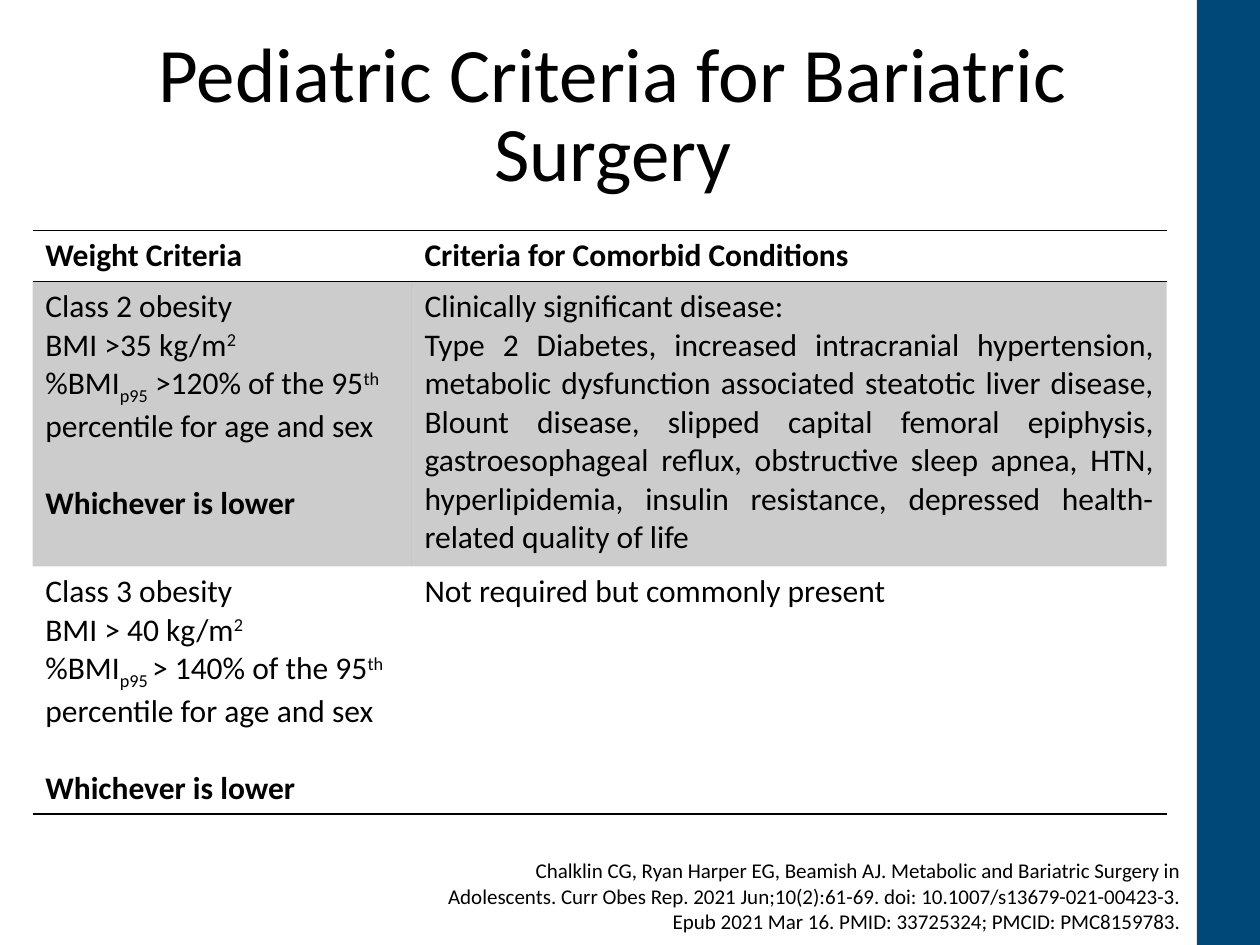
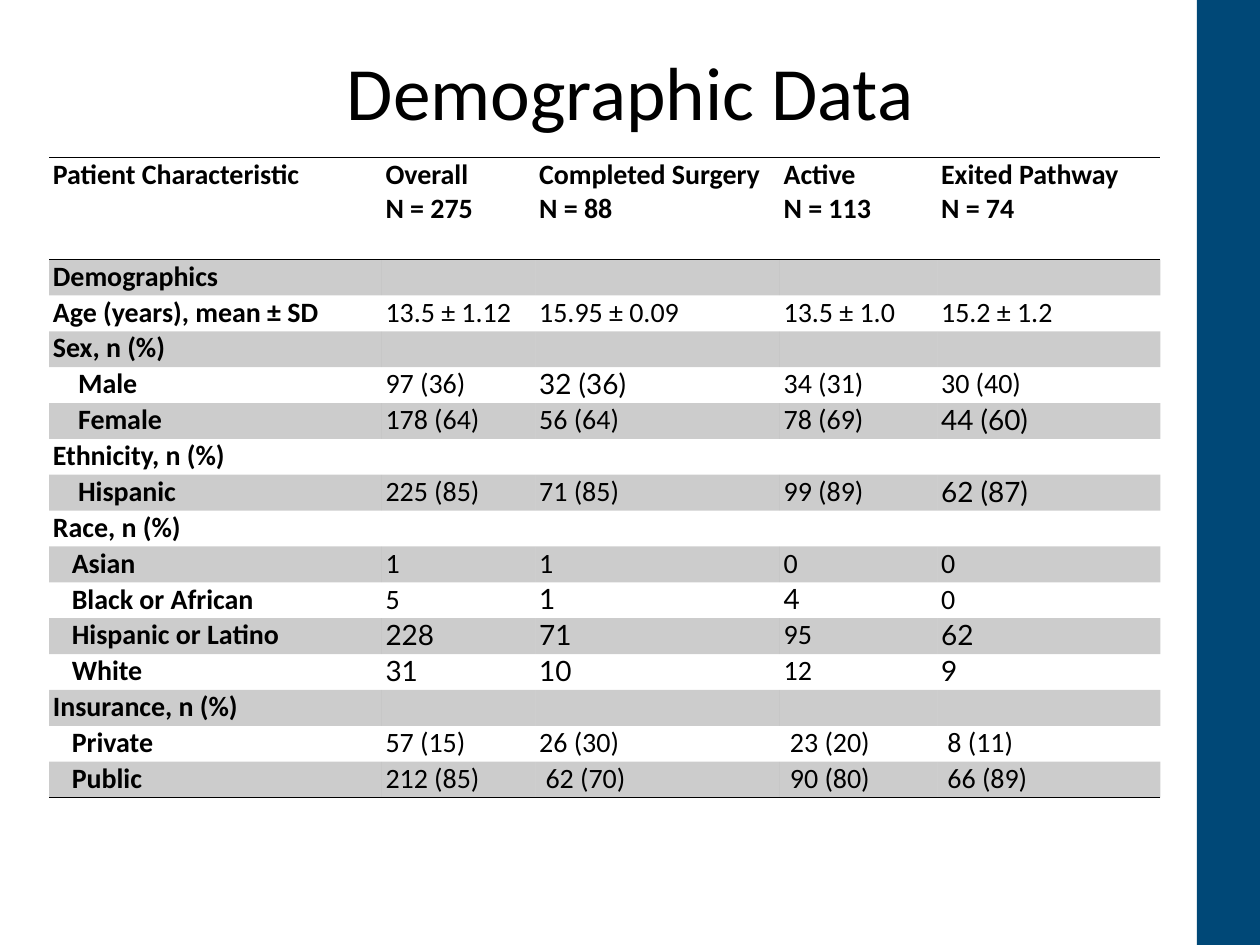
from pptx import Presentation, util as u
from pptx.dml.color import RGBColor
from pptx.enum import shapes as sh, text as tx
from pptx.oxml.ns import qn
from lxml import etree

THEME = dict(
    font="Calibri", alt="Lato", ink="000000", band="004877", tint=20000,
    lead=45, crit=18, demo=16, cite=12, gap=22, step=0.05, rule=1,
    plain="{2D5ABB26-0587-4C30-8999-92F81FD0307C}",
)
WIDE, HIGH = 10, 7.5


# Content: a run is (text, marks); b bold, ^ raised, _ lowered, L second font
def para(*runs, gap=0, level=0, align=None):
    return dict(runs=runs, gap=gap, level=level, align=align)


def bold(words, level=0):
    return [para((line, "b"), level=level) for line in words.split("\n")]


def weight(grade, bmi, sub, share):
    return [
        para((f"Class {grade} obesity", "")),
        para((f"BMI {bmi} kg/m", ""), ("2", "^")),
        para(("%BMI", ""), (sub, "_"), (f"{share} of the 95", ""),
             ("th", "^"), (" percentile for age and sex", "")),
        para(("Whichever is lower", "b"), gap=THEME["gap"]),
    ]


SIGNS = (
    "Type 2 Diabetes, increased intracranial hypertension, metabolic "
    "dysfunction associated steatotic liver disease, Blount disease, slipped "
    "capital femoral epiphysis, gastroesophageal reflux, obstructive sleep "
    "apnea, HTN, hyperlipidemia, insulin resistance, depressed "
    "health-related quality of life"
)
FULL = tx.PP_ALIGN.JUSTIFY
CRITERIA = [
    [bold("Weight Criteria"), bold("Criteria for Comorbid Conditions")],
    [weight(2, ">35", "p95", " >120%"),
     [para(("Clinically significant disease:", ""), align=FULL),
      para((SIGNS, ""), align=FULL)]],
    [weight(3, "> 40", "p95 ", "> 140%"),
     [para(("Not required but commonly present", ""))]],
]
SOURCE = (
    "Chalklin CG, Ryan Harper EG, Beamish AJ. Metabolic and Bariatric Surgery "
    "in Adolescents. Curr Obes Rep. 2021 Jun;10(2):61-69. doi: "
    "10.1007/s13679-021-00423-3. Epub 2021 Mar 16. PMID: 33725324; "
    "PMCID: PMC8159783."
)
HEADS = ["Patient Characteristic", "Overall\nN = 275",
         "Completed Surgery\nN = 88", "Active\nN = 113", "Exited Pathway\nN = 74"]
# Label, then figures: each ">" indents one step, "*" takes the second font
GROUPS = [
    ["Demographics"],
    ["Age (years), mean ± SD", "13.5 ± 1.12", "15.95 ± 0.09", "13.5 ± 1.0",
     "15.2 ± 1.2"],
    ["Sex, n (%)"],
    [">>>>Male", "97 (36)", "*32 (36)", "34 (31)", "30 (40)"],
    [">>>>Female", "178 (64)", "56 (64)", "78 (69)", "*44 (60)"],
    ["Ethnicity, n (%)"],
    [">>>>Hispanic", "225 (85)", "71 (85)", "99 (89)", "*62 (87)"],
    ["Race, n (%)"],
    [">>>Asian", "1", "1", "0", "0"],
    [">>>Black or African", "5", "*1", "*4", "0"],
    [">>>Hispanic or Latino", "*228", "*71", "95", "*62"],
    [">>>White", "*31", "*10", "12", "*9"],
    ["Insurance, n (%)"],
    [">>>Private", "57 (15)", "26 (30)", ">23 (20)", ">8 (11)"],
    [">>>Public", "212 (85)", ">62 (70)", ">90 (80)", ">66 (89)"],
]


def figure(mark):
    words = mark.lstrip(">")
    style = "L" if words.startswith("*") else ""
    return [para((words.lstrip("*"), style), level=len(mark) - len(words))]


def group(row):
    name = row[0].lstrip(">")
    cells = [bold(name, len(row[0]) - len(name))]
    cells += [figure(mark) for mark in row[1:]]
    return cells + [[]] * (len(HEADS) - len(row))


# Text
def write(frame, paras, size):
    for n, item in enumerate(paras):
        p = frame.paragraphs[0] if n == 0 else frame.add_paragraph()
        if item["align"] is not None:
            p.alignment = item["align"]
        if item["gap"]:
            p.space_before = u.Pt(item["gap"])
        if item["level"]:
            left = u.Inches(item["level"] * THEME["step"])
            p._p.get_or_add_pPr().set("marL", str(left))
        for words, marks in item["runs"]:
            run = p.add_run()
            run.text = words
            font = run.font
            font.size, font.bold = u.Pt(size), "b" in marks
            font.name = THEME["alt" if "L" in marks else "font"]
            font.color.rgb = RGBColor.from_string(THEME["ink"])
            for mark, shift in (("^", "30000"), ("_", "-25000")):
                if mark in marks:
                    run._r.get_or_add_rPr().set("baseline", shift)
    if not paras:
        end = etree.SubElement(frame.paragraphs[0]._p, qn("a:endParaRPr"))
        end.set("sz", str(size * 100))


def head(slide, words, size, box):
    title = slide.shapes.title
    title.left, title.top, title.width, title.height = map(u.Inches, box)
    frame = title.text_frame
    frame.word_wrap, frame.auto_size = True, tx.MSO_AUTO_SIZE.NONE
    frame.vertical_anchor = tx.MSO_ANCHOR.TOP
    write(frame, [para((words, ""), align=tx.PP_ALIGN.CENTER)], size)
    frame.paragraphs[0].line_spacing = u.Pt(THEME["lead"])


# Tables
def paint(cell, tinted):
    if not tinted:
        cell.fill.background()
        return
    cell.fill.solid()
    cell.fill.fore_color.rgb = RGBColor.from_string(THEME["ink"])
    ink = cell._tc.tcPr.find(".//" + qn("a:srgbClr"))
    etree.SubElement(ink, qn("a:alpha")).set("val", str(THEME["tint"]))


def rule(cell, sides):
    for n, side in enumerate(sides):
        line = etree.Element(qn("a:ln" + side), w=str(u.Pt(THEME["rule"])))
        fill = etree.SubElement(line, qn("a:solidFill"))
        etree.SubElement(fill, qn("a:srgbClr")).set("val", THEME["ink"])
        cell._tc.get_or_add_tcPr().insert(n, line)


def grid(slide, rows, at, cols, tall, size, inset=None):
    box = map(u.Inches, (*at, sum(cols), sum(tall)))
    table = slide.shapes.add_table(len(rows), len(cols), *box).table
    table.first_row = table.horz_banding = False
    table._tbl.tblPr.find(qn("a:tableStyleId")).text = THEME["plain"]
    for col, width in zip(table.columns, cols):
        col.width = u.Inches(width)
    for r, row in enumerate(rows):
        table.rows[r].height = u.Inches(tall[r])
        for c, paras in enumerate(row):
            cell = table.cell(r, c)
            if inset is not None:
                cell.margin_left = cell.margin_right = u.Inches(inset)
                cell.margin_top = cell.margin_bottom = 0
            write(cell.text_frame, paras, size)
            paint(cell, r % 2 == 1)
            rule(cell, ["T", "B"] if r == 0 else ["B"] if r == len(rows) - 1 else [])


# Side band, shared by every slide through the master
def side(deck, slide):
    wide = WIDE / 20
    band = slide.shapes.add_shape(
        sh.MSO_SHAPE.RECTANGLE, u.Inches(WIDE - wide), 0,
        u.Inches(wide), u.Inches(HIGH))
    band.shadow.inherit = False
    band.fill.solid()
    band.fill.fore_color.rgb = RGBColor.from_string(THEME["band"])
    band.line.fill.background()
    deck.slide_master.shapes._spTree.insert(2, band._element)


def main():
    deck = Presentation()
    deck.slide_width, deck.slide_height = u.Inches(WIDE), u.Inches(HIGH)
    first, second = [deck.slides.add_slide(deck.slide_layouts[5]) for _ in "12"]
    side(deck, first)

    # Criteria
    head(first, "Pediatric Criteria for Bariatric Surgery", 44,
         (0.26, 0.26, 9.21, 1.45))
    grid(first, CRITERIA, (0.26, 1.83), [3.01, 5.99], [0.4, 2.26, 1.9],
         THEME["crit"])
    note = first.shapes.add_textbox(*map(u.Inches, (3.27, 6.76, 6.2, 0.71)))
    note.text_frame.word_wrap = True
    write(note.text_frame, [para((SOURCE, ""), align=tx.PP_ALIGN.RIGHT)],
          THEME["cite"])

    # Demographics
    head(second, "Demographic Data", 43, (0.69, 0.4, 8.62, 1.45))
    rows = [[bold(name) for name in HEADS]] + [group(row) for row in GROUPS]
    line = (5.08 - 0.81) / len(GROUPS)
    grid(second, rows, (0.39, 1.25), [2.64, 1.22, 1.94, 1.25, 1.77],
         [0.81] + [line] * len(GROUPS), THEME["demo"], inset=0.03)
    deck.save("out.pptx")


if __name__ == "__main__":
    main()
